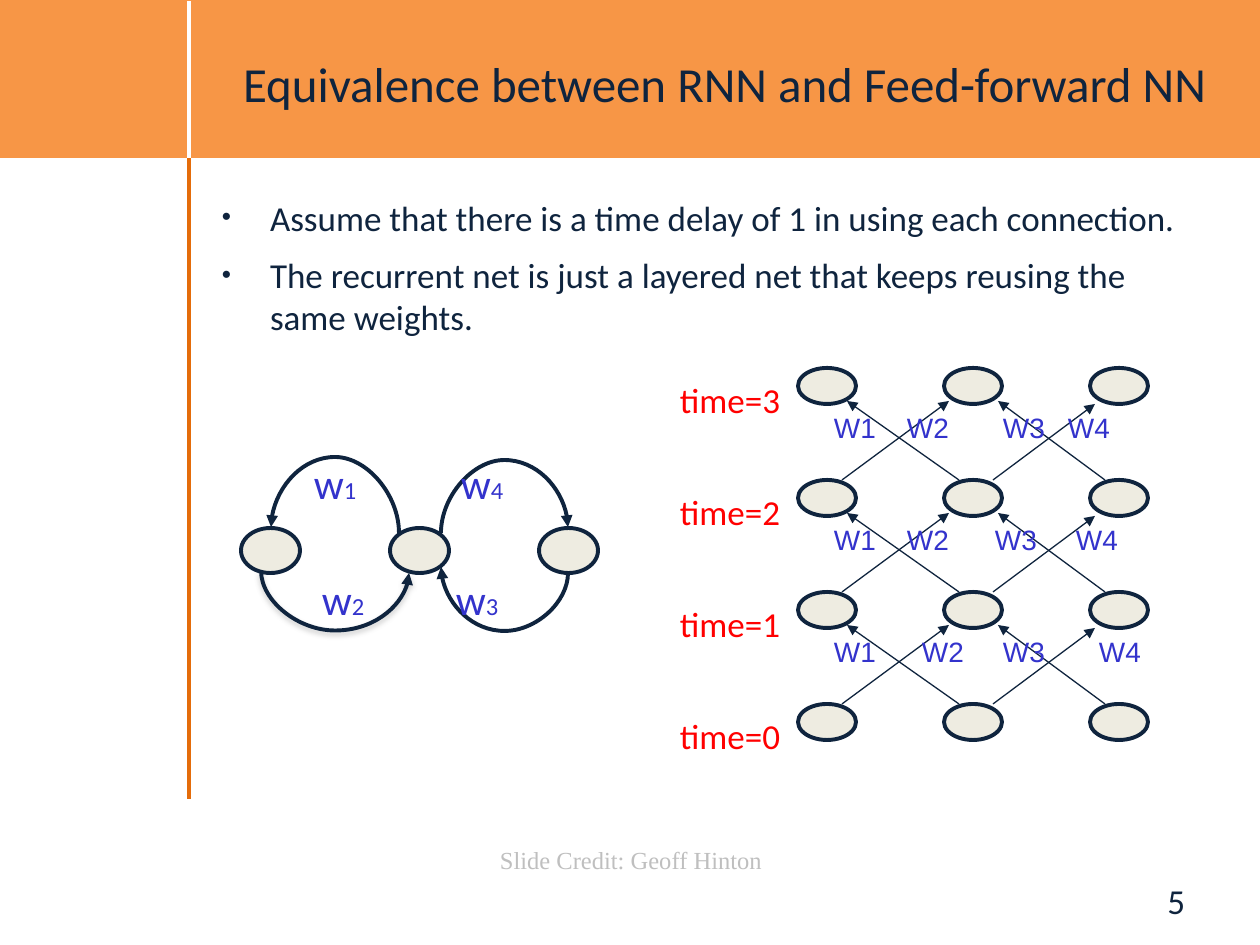
from dataclasses import dataclass

from lxml import etree
from pptx import Presentation
from pptx.dml.color import RGBColor
from pptx.enum.shapes import MSO_CONNECTOR, MSO_SHAPE
from pptx.enum.text import MSO_ANCHOR, PP_ALIGN
from pptx.oxml.ns import qn
from pptx.util import Inches, Pt

PX = Inches(1) / 126
STRAIGHT, CURVE = MSO_CONNECTOR.STRAIGHT, MSO_CONNECTOR.CURVE
OVAL, RECTANGLE = MSO_SHAPE.OVAL, MSO_SHAPE.RECTANGLE
LEFT, CENTER, RIGHT = PP_ALIGN.LEFT, PP_ALIGN.CENTER, PP_ALIGN.RIGHT
TOP, MIDDLE = MSO_ANCHOR.TOP, MSO_ANCHOR.MIDDLE
COLORS = {
    "header": "F79646", "rule": "E46C0A", "white": "FFFFFF", "ink": "0F243E",
    "node": "EEECE1", "weight": "3333CC", "time": "FF0000",
    "credit": "BFBFBF", "shadow": "808080",
}


@dataclass
class Arc:
    """A looping arrow that bows out to the height given by bow."""
    x1: int
    y1: int
    x2: int
    y2: int
    bow: int
    shadow: bool = False


@dataclass
class Weight:
    number: int
    left: int
    top: int


@dataclass
class Layer:
    time: int
    weight_lefts: tuple[int, ...] = ()


ARCS = [
    Arc(568, 573, 441, 567, 631),
    Arc(399, 533, 271, 527, 457),
    Arc(441, 533, 568, 527, 460),
    Arc(261, 571, 409, 573, 631, shadow=True),
]
WEIGHTS = [Weight(1, 314, 458), Weight(4, 461, 458),
           Weight(2, 322, 574), Weight(3, 456, 574)]
LAYERS = [
    Layer(3, (834, 907, 1003, 1068)),
    Layer(2, (834, 907, 995, 1076)),
    Layer(1, (834, 922, 1003, 1099)),
    Layer(0),
]
# Start x, end x and rise of the arrows between two layers
LINKS = [(842, 949, 79), (1105, 998, 79), (959, 847, 79), (993, 1095, 76)]
LAYER_TOP, LAYER_STEP = 368, 112
BULLETS = [
    "Assume that there is a time delay of 1 in using each connection.",
    "The recurrent net is just a layered net that keeps reusing the same weights.",
]

deck = Presentation()
deck.slide_width, deck.slide_height = Inches(10), Inches(7.5)
page = deck.slides.add_slide(deck.slide_layouts[6])


def px(value: float) -> int:
    return round(value * PX)


def color(name: str) -> RGBColor:
    return RGBColor.from_string(COLORS[name])


def add_shape(kind, left: int, top: int, width: int, height: int,
              fill: str, line: str, weight: float):
    shape = page.shapes.add_shape(kind, px(left), px(top), px(width), px(height))
    shape.shadow.inherit = False
    shape.fill.solid()
    shape.fill.fore_color.rgb = color(fill)
    shape.line.color.rgb = color(line)
    shape.line.width = Pt(weight)
    return shape


def add_line(x1: float, y1: float, x2: float, y2: float, *, stroke="ink",
             weight=0.75, arrow=False, kind=STRAIGHT):
    line = page.shapes.add_connector(kind, px(x1), px(y1), px(x2), px(y2))
    line.line.color.rgb = color(stroke)
    line.line.width = Pt(weight)
    if arrow:
        etree.SubElement(line.line._get_or_add_ln(), qn("a:tailEnd"), type="triangle")
    etree.SubElement(line._element.spPr, qn("a:effectLst"))
    return line


def add_arc(arc: Arc) -> None:
    # The curve is laid out sideways and turned by 270 degrees about its centre
    middle_x, middle_y = (arc.x1 + arc.x2) / 2, (arc.y1 + arc.y2) / 2
    half_width, half_height = abs(arc.y2 - arc.y1) / 2, abs(arc.x2 - arc.x1) / 2
    line = add_line(middle_x - half_width, middle_y - half_height,
                    middle_x + half_width, middle_y + half_height,
                    weight=2.25, arrow=True, kind=CURVE)
    properties = line._element.spPr
    frame = properties.find(qn("a:xfrm"))
    frame.set("rot", str(270 * 60000))
    if arc.y2 > arc.y1:
        frame.set("flipH", "1")
    if arc.x2 < arc.x1:
        frame.set("flipV", "1")
    bend = round(100000 * (arc.bow - arc.y1) / (arc.y2 - arc.y1))
    geometry = properties.find(qn("a:prstGeom"))
    guides = geometry.find(qn("a:avLst"))
    if guides is None:
        guides = etree.SubElement(geometry, qn("a:avLst"))
    etree.SubElement(guides, qn("a:gd"), name="adj1", fmla=f"val {bend}")
    if arc.shadow:
        shadow = etree.SubElement(properties.find(qn("a:effectLst")), qn("a:outerShdw"),
                                  blurRad="40000", dist="20000", dir="5400000", rotWithShape="0")
        tint = etree.SubElement(shadow, qn("a:srgbClr"), val=COLORS["shadow"])
        etree.SubElement(tint, qn("a:alpha"), val="38000")


def add_span(para, text: str, *, size: int, fill="ink", font="Calibri") -> None:
    span = para.add_run()
    span.text = text
    span.font.size = Pt(size)
    span.font.name = font
    span.font.color.rgb = color(fill)


def add_text(text: str, left: int, top: int, width: int, height: int, *,
             align=LEFT, anchor=TOP, inset=0, wrap=True, **style):
    box = page.shapes.add_textbox(px(left), px(top), px(width), px(height))
    frame = box.text_frame
    frame.word_wrap = wrap
    frame.vertical_anchor = anchor
    frame.margin_left = frame.margin_right = px(inset)
    frame.margin_top = frame.margin_bottom = px(inset / 2)
    para = frame.paragraphs[0]
    para.alignment = align
    add_span(para, text, **style)
    return frame


def add_bullet(para) -> None:
    properties = para._p.get_or_add_pPr()
    properties.set("marL", str(px(48)))
    properties.set("indent", str(px(-48)))
    etree.SubElement(properties, qn("a:buSzPct"), val="75000")
    etree.SubElement(properties, qn("a:buFont"), typeface="Arial")
    etree.SubElement(properties, qn("a:buChar"), char="•")


# Header band and vertical rule
add_shape(RECTANGLE, 0, 0, 1260, 157, "header", "header", 0.75)
add_line(189, 158, 189, 799, stroke="rule", weight=2.5)
add_line(189, 1, 189, 158, stroke="white", weight=2.5)

# Title, bullets and footer
add_text("Equivalence between RNN and Feed-forward NN", 189, 4, 1071, 158,
         align=CENTER, anchor=MIDDLE, inset=12, size=28)
body = add_text(BULLETS[0], 210, 190, 987, 160, inset=12, size=20)
second = body.add_paragraph()
add_span(second, BULLETS[1], size=20)
for bullet in body.paragraphs:
    add_bullet(bullet)
second.space_before = Pt(9)
add_text("5", 903, 876, 294, 50, align=RIGHT, anchor=MIDDLE, inset=12, size=20)
add_text("Slide Credit: Geoff Hinton", 488, 839, 290, 43, inset=12, wrap=False,
         size=14, fill="credit", font="Times New Roman")

# Network unrolled in time
for row, layer in enumerate(LAYERS):
    layer_top = LAYER_TOP + row * LAYER_STEP
    for column in range(3):
        add_shape(OVAL, 798 + 146 * column, layer_top, 58, 36, "node", "ink", 2.25)
    add_text(f"time={layer.time}", 680, layer_top + 10, 112, 44, size=20, fill="time")
    if layer.weight_lefts:
        lower_top = layer_top + LAYER_STEP
        for start, end, rise in LINKS:
            add_line(start, lower_top, end, lower_top - rise, arrow=True)
    for number, label_left in enumerate(layer.weight_lefts, 1):
        add_text(f"W{number}", label_left, layer_top + 43, 50, 34,
                 size=16, fill="weight", font="Arial")

# Recurrent network
for column in range(3):
    add_shape(OVAL, 241 + 149 * column, 528, 59, 45, "node", "ink", 2.25)
for loop in ARCS:
    add_arc(loop)
for weight in WEIGHTS:
    label = add_text("w", weight.left, weight.top, 50, 52, size=24, fill="weight")
    add_span(label.paragraphs[0], str(weight.number), size=14, fill="weight")

deck.save("out.pptx")
